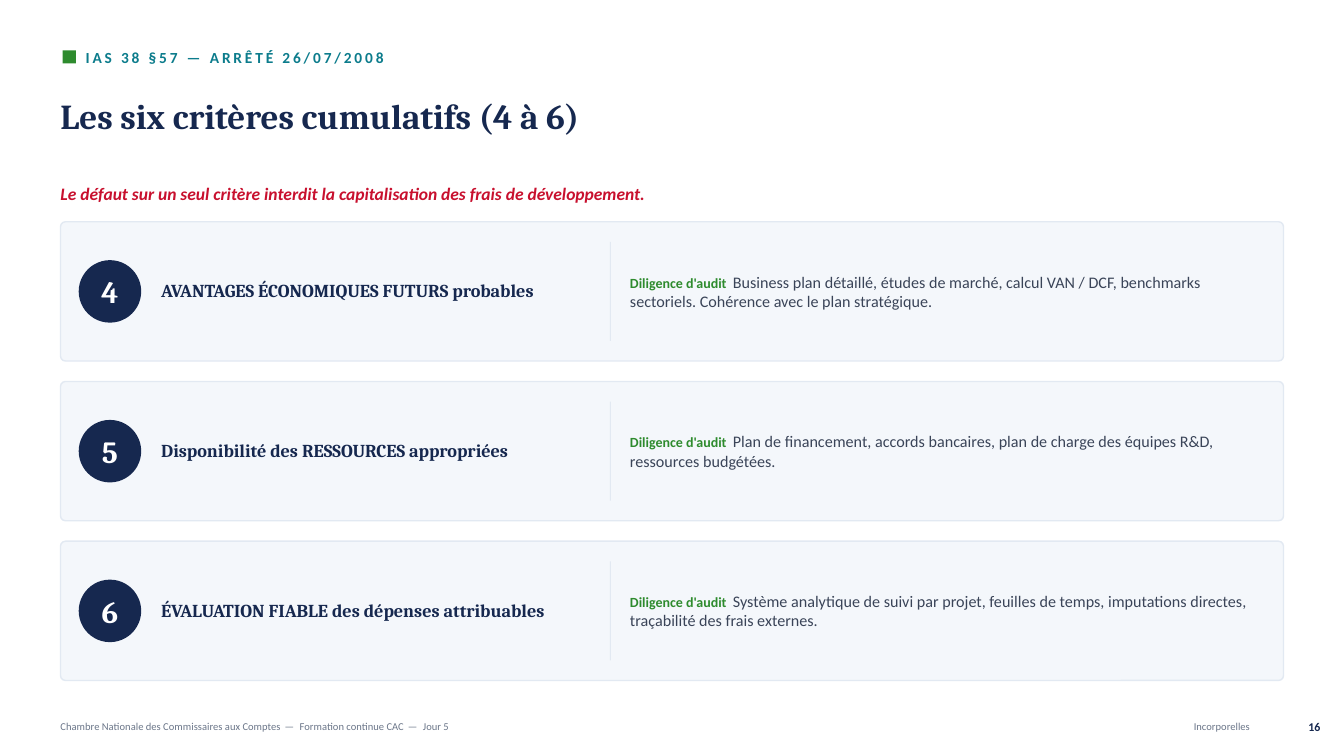
from pptx import Presentation
from pptx.dml.color import RGBColor
from pptx.enum.shapes import MSO_SHAPE
from pptx.enum.text import MSO_ANCHOR, PP_ALIGN
from pptx.util import Pt

RECT, ROUND, OVAL = MSO_SHAPE.RECTANGLE, MSO_SHAPE.ROUNDED_RECTANGLE, MSO_SHAPE.OVAL
MIDDLE = MSO_ANCHOR.MIDDLE
LEFT, CENTER, RIGHT = PP_ALIGN.LEFT, PP_ALIGN.CENTER, PP_ALIGN.RIGHT

COLORS = {
    "navy": "16284F", "green": "2E8B2E", "teal": "0C7C8C", "red": "C8102E",
    "card": "F4F7FB", "rule": "E2E9F2", "body": "3A4458", "gray": "6B7689",
    "white": "FFFFFF",
}
SANS, SERIF = "Calibri", "Cambria"

KICKER = "IAS 38 §57 — ARRÊTÉ 26/07/2008"
TITLE = "Les six critères cumulatifs (4 à 6)"
WARNING = "Le défaut sur un seul critère interdit la capitalisation des frais de développement."
LABEL = "Diligence d'audit"
CRITERIA = [
    ("4", "AVANTAGES ÉCONOMIQUES FUTURS probables",
     "Business plan détaillé, études de marché, calcul VAN / DCF, benchmarks sectoriels. "
     "Cohérence avec le plan stratégique."),
    ("5", "Disponibilité des RESSOURCES appropriées",
     "Plan de financement, accords bancaires, plan de charge des équipes R&D, "
     "ressources budgétées."),
    ("6", "ÉVALUATION FIABLE des dépenses attribuables",
     "Système analytique de suivi par projet, feuilles de temps, imputations directes, "
     "traçabilité des frais externes."),
]
FOOTER = ["Chambre Nationale des Commissaires aux Comptes", "Formation continue CAC", "Jour 5"]
SECTION, PAGE = "Incorporelles", "16"

MARGIN = 43.2
CARD_TOP, CARD_W, CARD_H, PITCH = 158.4, 873.6, 99.5, 114.1
DISC = 44.64
FOOT_TOP, FOOT_H = 508.3, 21.6

deck = Presentation()
deck.slide_width, deck.slide_height = Pt(960), Pt(540)
slide = deck.slides.add_slide(deck.slide_layouts[6])


def rgb(name):
    return RGBColor.from_string(COLORS[name])


def add_box(kind, x, y, w, h, fill, line=None):
    box = slide.shapes.add_shape(kind, Pt(x), Pt(y), Pt(w), Pt(h))
    box.shadow.inherit = False
    box.fill.solid()
    box.fill.fore_color.rgb = rgb(fill)
    if line:
        box.line.color.rgb = rgb(line)
        box.line.width = Pt(1)
    else:
        box.line.fill.background()
    return box


def add_text(text, x, y, w, h, align=LEFT, leading=None, **base):
    """Place a string, or a list of (string, format) runs that override the base format."""
    frame = slide.shapes.add_textbox(Pt(x), Pt(y), Pt(w), Pt(h)).text_frame
    frame.word_wrap = True
    frame.vertical_anchor = MIDDLE
    frame.margin_left = frame.margin_top = frame.margin_right = frame.margin_bottom = 0
    para = frame.paragraphs[0]
    para.alignment = align
    if leading:
        para.line_spacing = leading
    for part, extra in [(text, {})] if isinstance(text, str) else text:
        look = {"font": SANS, "bold": False, "italic": False, "track": 0, **base, **extra}
        run = para.add_run()
        run.text = part
        run.font.name, run.font.size = look["font"], Pt(look["size"])
        run.font.bold, run.font.italic = look["bold"], look["italic"]
        run.font.color.rgb = rgb(look["color"])
        if look["track"]:
            run.font._element.set("spc", str(round(look["track"] * 100)))


def add_card(top, number, name, audit):
    mid = top + CARD_H / 2
    card = add_box(ROUND, MARGIN, top, CARD_W, CARD_H, "card", "rule")
    card.adjustments[0] = 0.036
    disc = (56.2, mid - DISC / 2, DISC, DISC)
    add_box(OVAL, *disc, "navy")
    add_text(number, *disc, align=CENTER, font=SERIF, size=22, color="white", bold=True)
    add_text(name, 115.2, mid - 44, 316.8, 88, leading=0.95,
             font=SERIF, size=13, color="navy", bold=True)
    add_box(RECT, 435.6, mid - 35.3, 0.8, 70.6, "rule")
    tag = {"size": 10, "color": "green", "bold": True}
    add_text([(LABEL, tag), (" ", {**tag, "track": 2.3}), (audit, {})],
             450, mid - 46, 450, 92, size=11.5, color="body")


add_box(RECT, 44.8, 36, 9.4, 9.4, "green")
add_text(KICKER, 61.2, 30.2, 835.2, 21.6, size=11, color="teal", bold=True, track=2)
add_text(TITLE, MARGIN, 53.3, 871.2, 61.2, leading=0.95,
         font=SERIF, size=25, color="navy", bold=True)
add_text(WARNING, MARGIN, 125.3, 864, 25.2, size=12.5, color="red", bold=True, italic=True)

for row, item in enumerate(CRITERIA):
    add_card(CARD_TOP + row * PITCH, *item)

parts = [(FOOTER[0], {})]
for part in FOOTER[1:]:
    parts += [(" — ", {"track": 1.1}), (part, {})]
add_text(parts, MARGIN, FOOT_TOP, 662.4, FOOT_H, size=7.5, color="gray")
add_text(SECTION, 684, FOOT_TOP, 208.8, FOOT_H, align=RIGHT, size=7.5, color="gray")
add_text(PAGE, 907.2, FOOT_TOP, 36, FOOT_H, align=RIGHT, size=8.5, color="navy", bold=True)

deck.save("out.pptx")
